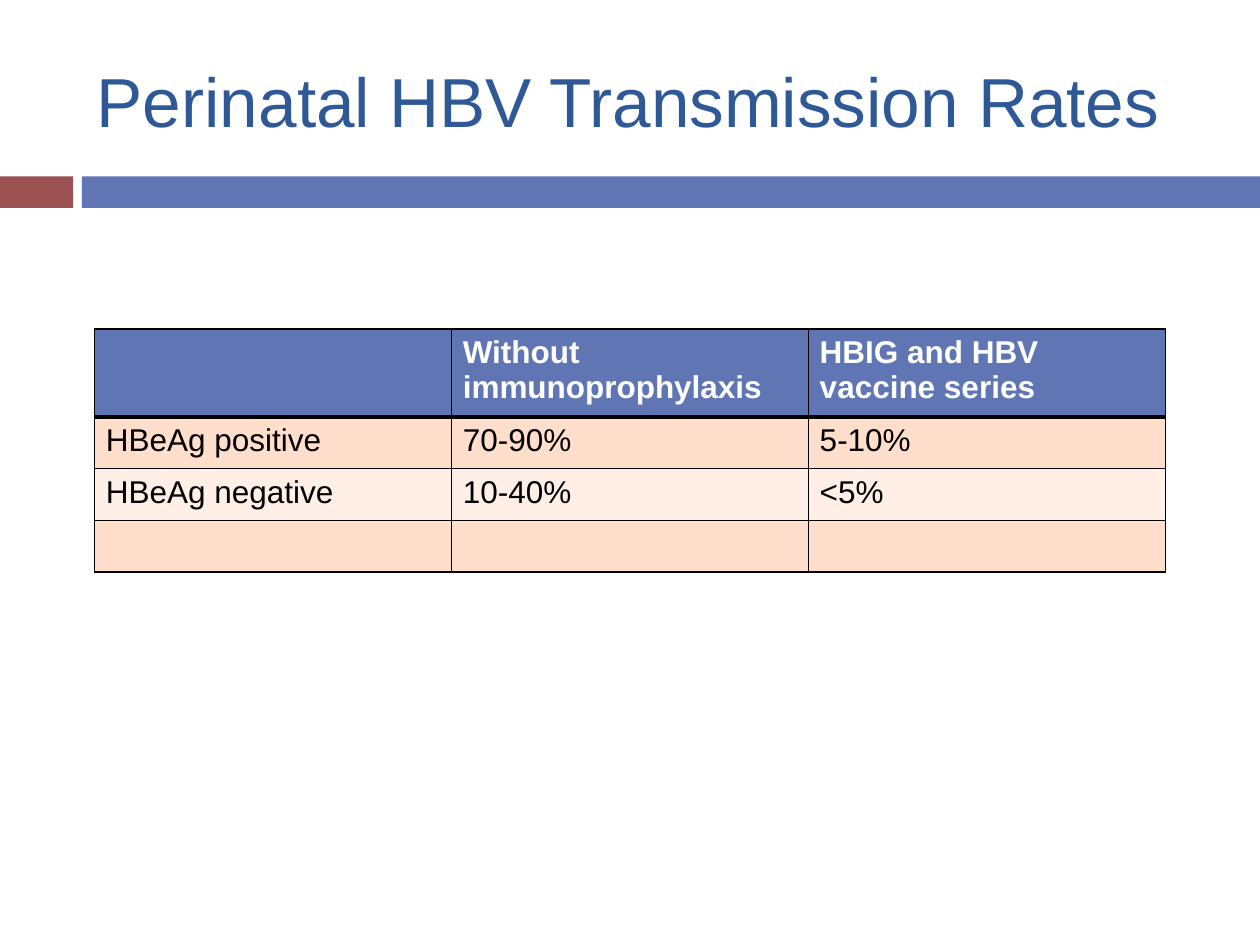
from dataclasses import dataclass

from lxml.etree import SubElement
from pptx import Presentation
from pptx.dml.color import RGBColor as RGB
from pptx.enum.shapes import MSO_SHAPE as Shape
from pptx.enum.text import MSO_ANCHOR as Anchor
from pptx.oxml.ns import qn
from pptx.util import Inches, Pt


@dataclass(frozen=True)
class Theme:
    font: str = "Arial"
    title_size: float = 39.6
    table_size: float = 18
    title: str = "2F5897"
    accent: str = "9C5252"
    band: str = "6076B4"
    row_dark: str = "FFDECB"
    row_light: str = "FFEFE7"
    header_text: str = "FFFFFF"
    body_text: str = "000000"
    border: str = "000000"
    thin: float = 1
    thick: float = 3


class SlideBuilder:
    def __init__(self, slide, theme):
        self.slide = slide
        self.theme = theme

    def style(self, paragraph, size, color, bold=False):
        font = paragraph.font
        font.name = self.theme.font
        font.size = Pt(size)
        font.bold = bold
        font.color.rgb = RGB.from_string(color)

    def bar(self, left, top, width, height, color):
        bar = self.slide.shapes.add_shape(
            Shape.RECTANGLE, Inches(left), Inches(top), Inches(width), Inches(height))
        bar.shadow.inherit = False
        bar.fill.solid()
        bar.fill.fore_color.rgb = RGB.from_string(color)
        bar.line.fill.background()

    def title(self, text, left, top, width, height):
        frame = self.slide.shapes.add_textbox(
            Inches(left), Inches(top), Inches(width), Inches(height)).text_frame
        frame.word_wrap = True
        frame.vertical_anchor = Anchor.MIDDLE
        heading = frame.paragraphs[0]
        heading.text = text
        self.style(heading, self.theme.title_size, self.theme.title)

    def border(self, cell, side, width):
        properties = cell._tc.get_or_add_tcPr()
        line = SubElement(properties, qn(f"a:ln{side}"), w=str(Pt(width)))
        fill = SubElement(line, qn("a:solidFill"))
        SubElement(fill, qn("a:srgbClr"), val=self.theme.border)

    def cell(self, cell, text, row):
        theme = self.theme
        header = row == 0
        widths = {"L": theme.thin, "R": theme.thin,
                  "T": theme.thick if row == 1 else theme.thin,
                  "B": theme.thick if header else theme.thin}
        for side, width in widths.items():
            self.border(cell, side, width)
        color = theme.band if header else theme.row_dark if row % 2 else theme.row_light
        cell.fill.solid()
        cell.fill.fore_color.rgb = RGB.from_string(color)
        cell.margin_left = cell.margin_right = Inches(0.09)
        cell.text = text
        self.style(cell.text_frame.paragraphs[0], theme.table_size,
                   theme.header_text if header else theme.body_text, header)

    def table(self, rows, left, top, width, heights):
        table = self.slide.shapes.add_table(
            len(rows), len(rows[0]), Inches(left), Inches(top),
            Inches(width), Inches(sum(heights))).table
        for row, (texts, height) in enumerate(zip(rows, heights)):
            table.rows[row].height = Inches(height)
            for column, text in enumerate(texts):
                self.cell(table.cell(row, column), text, row)


def main():
    deck = Presentation()
    deck.slide_width, deck.slide_height = Inches(10), Inches(7.5)
    theme = Theme()
    builder = SlideBuilder(deck.slides.add_slide(deck.slide_layouts[6]), theme)

    builder.bar(0, 1.4, 0.58, 0.25, theme.accent)
    builder.bar(0.65, 1.4, 9.35, 0.25, theme.band)
    builder.title("Perinatal HBV Transmission Rates", 0.67, 0.25, 8.92, 1.08)

    transmission_rates = [
        ("", "Without immunoprophylaxis", "HBIG and HBV vaccine series"),
        ("HBeAg positive", "70-90%", "5-10%"),
        ("HBeAg negative", "10-40%", "<5%"),
        ("", "", ""),
    ]
    builder.table(transmission_rates, 0.75, 2.61, 8.5, [0.7] + [0.41] * 3)

    deck.save("out.pptx")


if __name__ == "__main__":
    main()
